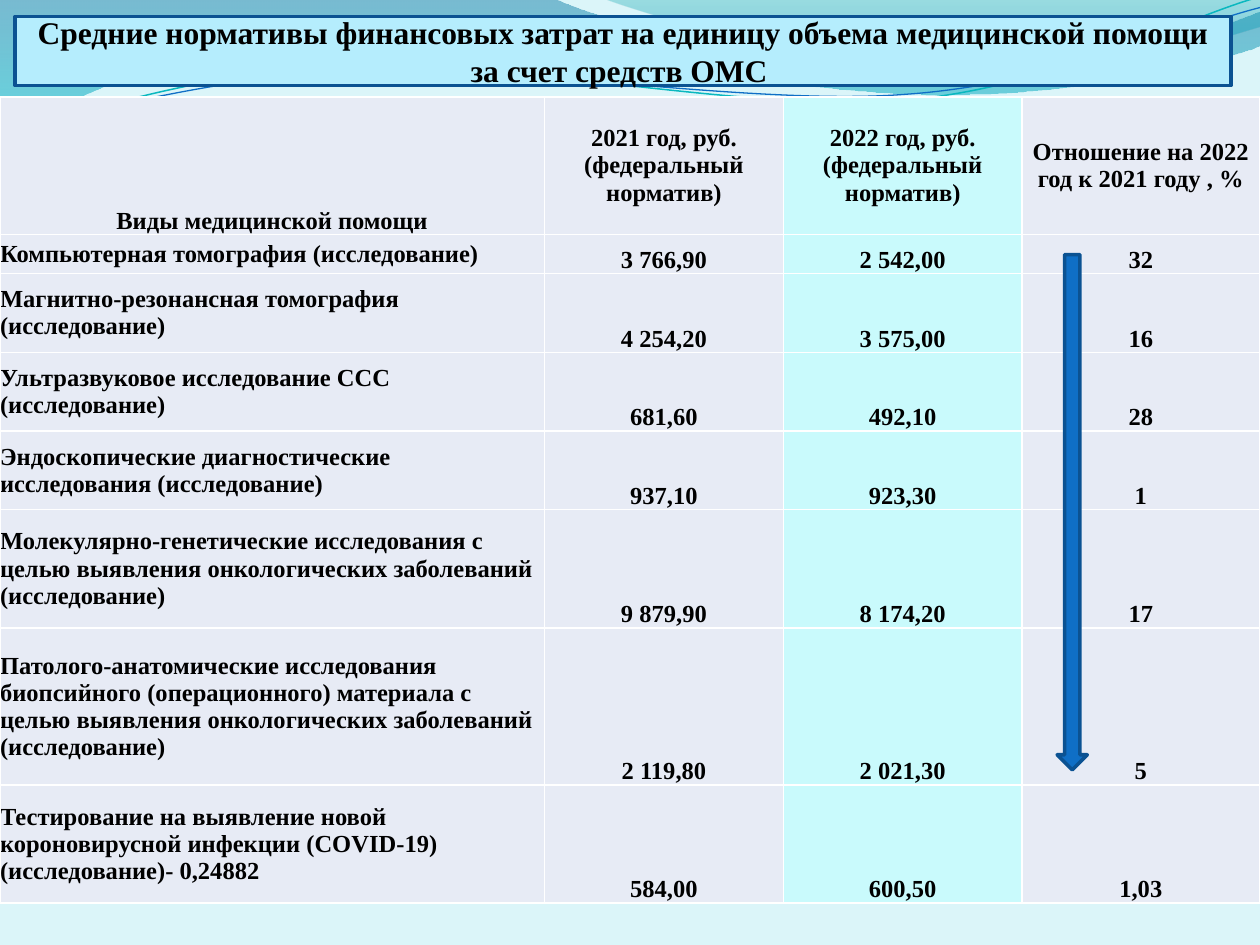
"""Builds a slide comparing average health care cost norms for 2021 and 2022."""
from pptx import Presentation
from pptx.dml.color import RGBColor
from pptx.enum.shapes import MSO_SHAPE
from pptx.enum.text import MSO_ANCHOR, MSO_AUTO_SIZE, PP_ALIGN
from pptx.oxml.ns import qn
from pptx.util import Inches, Pt
from lxml.etree import SubElement

FONT = "Times New Roman"
BLACK = RGBColor(0x00, 0x00, 0x00)
WHITE = RGBColor(0xFF, 0xFF, 0xFF)
PAPER = RGBColor(0xDB, 0xF5, 0xF9)
GREY = RGBColor(0xE7, 0xEB, 0xF5)
AQUA = RGBColor(0xC9, 0xFA, 0xFC)
SKY = RGBColor(0xB5, 0xED, 0xFD)
BLUE = RGBColor(0x0F, 0x6F, 0xC6)
NAVY = RGBColor(0x0B, 0x52, 0x92)
TEAL = RGBColor(0x0A, 0xB8, 0xBF)

TITLE = "Средние нормативы финансовых затрат на единицу объема медицинской помощи за счет средств ОМС "
ROWS = [
    ("Виды медицинской помощи", "2021 год, руб. (федеральный норматив)",
     "2022 год, руб. (федеральный норматив)", "Отношение на 2022 год к 2021 году , %"),
    ("Компьютерная томография (исследование)", "3 766,90", "2 542,00", "32"),
    ("Магнитно-резонансная томография (исследование)", "4 254,20", "3 575,00", "16"),
    ("Ультразвуковое исследование ССС (исследование)", "681,60", "492,10", "28"),
    ("Эндоскопические диагностические исследования (исследование)", "937,10", "923,30", "1"),
    ("Молекулярно-генетические исследования с целью выявления онкологических заболеваний (исследование)",
     "9 879,90", "8 174,20", "17"),
    ("Патолого-анатомические исследования биопсийного (операционного) материала с целью выявления "
     "онкологических заболеваний (исследование)", "2 119,80", "2 021,30", "5"),
    ("Тестирование на выявление новой короновирусной инфекции (COVID-19) (исследование)- 0,24882",
     "584,00", "600,50", "1,03"),
]
COL_WIDTHS = [4.32, 1.9, 1.89, 1.89]
COL_FILLS = [GREY, GREY, AQUA, GREY]
TABLE_HEIGHT, HEADER_HEIGHT = 6.4, 1.09
ROW_LINES = [1, 2, 2, 2, 3, 4, 3]
LINE_HEIGHT = (TABLE_HEIGHT - HEADER_HEIGHT) / sum(ROW_LINES)
ROW_HEIGHTS = [HEADER_HEIGHT] + [n * LINE_HEIGHT for n in ROW_LINES]

BANDS = [
    ([(0, 0), (4.4, -0.01),
      (4.76, 0.17, 6.64, 0.63, 7.58, 0.63), (8.53, 0.63, 9.58, 0.26, 10, 0.09), (10.01, 0.36),
      (9.83, 0.44, 8.7, 0.76, 7.46, 0.75), (6.22, 0.75, 3.82, 0.28, 2.57, 0.34),
      (1.29, 0.36, 0.46, 0.83, -0.01, 1.13), (0, 0)],
     [(0, RGBColor(0x00, 0x74, 0xA1), 45), (1, RGBColor(0x00, 0xC6, 0xCF), 55)]),
    ([(4.79, -0.01), (5.09, 0.11, 6.82, 0.62, 7.69, 0.65),
      (8.56, 0.69, 9.61, 0.32, 10, 0.21), (10, 0), (4.79, -0.01)],
     [(0, RGBColor(0x00, 0xA1, 0xA9), 30), (0.8, RGBColor(0x00, 0x8B, 0xBF), 45)]),
]
WAVES = [
    ([(0, 1.11), (0.48, 0.93, 1.58, 0.57, 2.77, 0.52), (3.95, 0.47, 5.93, 0.89, 7.13, 0.8),
      (8.33, 0.71, 9.38, 0.15, 9.98, -0.02)], TEAL, 0.85),
    ([(0, 1.04), (0.47, 0.96, 1.64, 0.61, 2.83, 0.56), (4.03, 0.51, 5.97, 0.84, 7.17, 0.75),
      (8.36, 0.67, 9.41, 0.21, 10, 0.06)], BLUE, 0.75),
]


def add_outline(s, outline, close):
    """Draws an outline whose six-number parts are cubic curves."""
    pts = [(Inches(part[k]), Inches(part[k + 1])) for part in outline for k in range(0, len(part), 2)]
    fb = s.shapes.build_freeform(*pts[0])
    fb.add_line_segments(pts[1:], close=close)
    sp = fb.convert_to_shape()
    sp.shadow.inherit = False
    segments = iter(list(sp.element.iter(qn("a:lnTo"))))
    for part in outline[1:]:
        segment = next(segments)
        if len(part) == 6:
            curve = segment.makeelement(qn("a:cubicBezTo"))
            segment.addprevious(curve)
            for leg in (segment, next(segments), next(segments)):
                curve.append(leg[0])
                leg.getparent().remove(leg)
    return sp


def add_band(s, outline, stops):
    sp = add_outline(s, outline, True)
    sp.line.fill.background()
    sp.fill.gradient()
    sp.fill.gradient_angle = 270
    for stop, (pos, color, _) in zip(sp.fill.gradient_stops, stops):
        stop.position = pos
        stop.color.rgb = color
    for clr, (_, _, opacity) in zip(sp.element.iter(qn("a:srgbClr")), stops):
        SubElement(clr, qn("a:alpha"), val=str(opacity * 1000))


def add_wave(s, outline, color, width):
    sp = add_outline(s, outline, False)
    sp.fill.background()
    sp.line.color.rgb = color
    sp.line.width = Pt(width)


def paint(sp, fill):
    sp.fill.solid()
    sp.fill.fore_color.rgb = fill
    sp.line.color.rgb = NAVY
    sp.line.width = Pt(2)


def write(tf, text, size, align):
    p = tf.paragraphs[0]
    p.alignment = align
    r = p.add_run()
    r.text = text
    for name, value in {"name": FONT, "size": Pt(size), "bold": True}.items():
        setattr(r.font, name, value)
    r.font.color.rgb = BLACK


def add_borders(cell):
    tc_pr = cell._tc.get_or_add_tcPr()
    for side in ("lnL", "lnR", "lnT", "lnB"):
        ln = SubElement(tc_pr, qn(f"a:{side}"), w=str(Pt(1)))
        SubElement(SubElement(ln, qn("a:solidFill")), qn("a:srgbClr"), val=str(WHITE))


def add_norms(s):
    table = s.shapes.add_table(len(ROWS), len(COL_WIDTHS), 0, Inches(0.77),
                               Inches(sum(COL_WIDTHS)), Inches(TABLE_HEIGHT)).table
    for col, width in zip(table.columns, COL_WIDTHS):
        col.width = Inches(width)
    for i, (height, texts) in enumerate(zip(ROW_HEIGHTS, ROWS)):
        table.rows[i].height = Inches(height)
        for j, text in enumerate(texts):
            cell = table.cell(i, j)
            for side in ("left", "right", "top", "bottom"):
                setattr(cell, f"margin_{side}", 0)
            low = (i == 0) == (j == 0)
            cell.vertical_anchor = MSO_ANCHOR.BOTTOM if low else MSO_ANCHOR.MIDDLE
            add_borders(cell)
            cell.fill.solid()
            cell.fill.fore_color.rgb = COL_FILLS[j]
            write(cell.text_frame, text, 14, PP_ALIGN.LEFT if i and not j else PP_ALIGN.CENTER)


def add_title(s):
    sp = s.shapes.title
    s.shapes.element.append(sp.element)
    box = {"left": 0.12, "top": 0.13, "width": 9.65, "height": 0.55}
    for name, value in box.items():
        setattr(sp, name, Inches(value))
    paint(sp, SKY)
    tf = sp.text_frame
    tf.word_wrap = True
    tf.auto_size = MSO_AUTO_SIZE.NONE
    tf.vertical_anchor = MSO_ANCHOR.MIDDLE
    write(tf, TITLE, 18, PP_ALIGN.CENTER)


def main():
    prs = Presentation()
    prs.slide_width, prs.slide_height = Inches(10), Inches(7.5)
    s = prs.slides.add_slide(prs.slide_layouts[5])
    s.background.fill.solid()
    s.background.fill.fore_color.rgb = PAPER
    for band in BANDS:
        add_band(s, *band)
    for wave in WAVES:
        add_wave(s, *wave)
    add_norms(s)
    add_title(s)
    arrow = s.shapes.add_shape(MSO_SHAPE.DOWN_ARROW, Inches(8.39), Inches(2.02), Inches(0.24), Inches(4.09))
    arrow.shadow.inherit = False
    paint(arrow, BLUE)
    prs.save("out.pptx")


if __name__ == "__main__":
    main()
